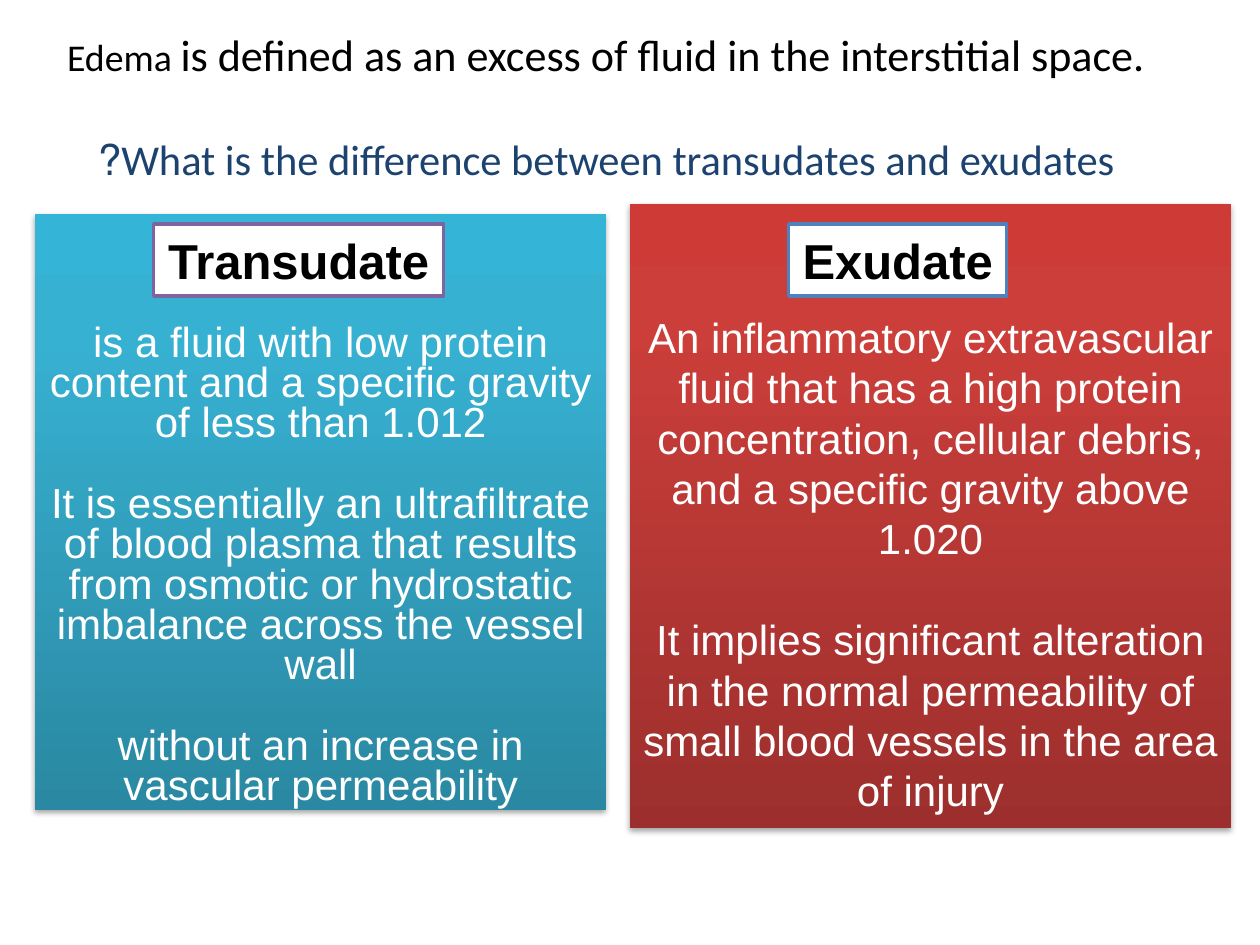
from lxml.etree import SubElement
from pptx import Presentation
from pptx.dml.color import RGBColor
from pptx.enum.shapes import MSO_SHAPE
from pptx.enum.text import MSO_ANCHOR, PP_ALIGN
from pptx.oxml.ns import qn
from pptx.util import Inches, Pt

COLORS = {
    "black": "000000", "white": "FFFFFF", "question": "1C4270",
    "purple": "8064A2", "blue": "4F81BD",
}
# Gradient stops run from the bottom of a panel to its top.
RED = [(0, "9C2F2D"), (80, "CB3E3A"), (100, "CE3B37")]
TEAL = [(0, "2A88A2"), (80, "37B1D2"), (100, "34B4D6")]

TRANSUDATE = [
    "is a fluid with low protein content and a specific gravity of less than 1.012",
    "It is essentially an ultrafiltrate of blood plasma that results from osmotic "
    "or hydrostatic imbalance across the vessel wall",
    "without an increase in vascular permeability",
]
EXUDATE = [
    "An inflammatory extravascular fluid that has a high protein concentration, "
    "cellular debris, and a specific gravity above 1.020",
    "It implies significant alteration in the normal permeability of small blood "
    "vessels in the area of injury",
]


def rgb(name):
    return RGBColor.from_string(COLORS[name])


def add_paragraph(tf, first, rtl=True):
    """Return a centred paragraph."""
    p = tf.paragraphs[0] if first else tf.add_paragraph()
    p.alignment = PP_ALIGN.CENTER
    p._p.get_or_add_pPr().set("rtl", "1" if rtl else "0")
    return p


def add_run(p, text, size, color, font="Arial", bold=False):
    r = p.add_run()
    r.text = text
    r.font.size = Pt(size)
    r.font.name = font
    r.font.bold = bold
    r.font.color.rgb = rgb(color)


def add_heading(s, left, top, width, height):
    sp = s.shapes.add_textbox(Inches(left), Inches(top), Inches(width), Inches(height))
    tf = sp.text_frame
    tf.word_wrap = True
    tf.margin_top = 0
    p = add_paragraph(tf, True, rtl=False)
    add_run(p, "Edema ", 21.6, "black", "Calibri")
    add_run(p, "is defined as an excess of fluid in the interstitial space.",
            25.2, "black", "Calibri")
    p = add_paragraph(tf, False)
    p.space_before = Pt(30)
    add_run(p, "What is the difference between transudates and exudates?",
            24.3, "question", "Calibri")


def add_rectangle(s, left, top, width, height):
    sp = s.shapes.add_shape(MSO_SHAPE.RECTANGLE, Inches(left), Inches(top),
                            Inches(width), Inches(height))
    sp.shadow.inherit = False
    return sp


def fill_gradient(sp, stops):
    sp.fill.gradient()
    sp.fill.gradient_angle = 90
    stop_list = sp._element.spPr.find(".//" + qn("a:gsLst"))
    stop_list.clear()
    for position, color in stops:
        gs = SubElement(stop_list, qn("a:gs"), pos=str(position * 1000))
        SubElement(gs, qn("a:srgbClr"), val=color)


def add_shadow(sp):
    effects = sp._element.spPr.find(qn("a:effectLst"))
    shadow = SubElement(effects, qn("a:outerShdw"), blurRad=str(Pt(3.1)),
                        dist=str(Pt(1.8)), dir="5400000", rotWithShape="0")
    color = SubElement(shadow, qn("a:srgbClr"), val=COLORS["black"])
    SubElement(color, qn("a:alpha"), val="35000")


def add_label(s, text, left, top, width, height, border):
    sp = add_rectangle(s, left, top, width, height)
    sp.fill.solid()
    sp.fill.fore_color.rgb = rgb("white")
    sp.line.color.rgb = rgb(border)
    sp.line.width = Pt(2)
    tf = sp.text_frame
    tf.word_wrap = False
    tf.vertical_anchor = MSO_ANCHOR.MIDDLE
    add_run(add_paragraph(tf, True), text, 28, "black", bold=True)


def add_panel(s, left, top, width, height, stops, texts, text_top, spacing, gap):
    sp = add_rectangle(s, left, top, width, height)
    fill_gradient(sp, stops)
    sp.line.fill.background()
    add_shadow(sp)
    tf = sp.text_frame
    tf.word_wrap = True
    tf.vertical_anchor = MSO_ANCHOR.TOP
    tf.margin_left = tf.margin_right = Inches(0.08)
    tf.margin_top = Inches(text_top)
    tf.margin_bottom = 0
    for i, text in enumerate(texts):
        p = add_paragraph(tf, i == 0)
        p.line_spacing = spacing
        if i:
            p.space_before = Pt(gap)
        add_run(p, text, 24, "white")


def main():
    prs = Presentation()
    prs.slide_width, prs.slide_height = Inches(10), Inches(7.5)
    s = prs.slides.add_slide(prs.slide_layouts[6])
    add_heading(s, 0.31, 0.22, 9, 1.3)
    add_panel(s, 5, 1.62, 4.77, 4.95, RED, EXUDATE, 0.85, 1.0, 28.8)
    add_panel(s, 0.28, 1.7, 4.53, 4.73, TEAL, TRANSUDATE, 0.88, 0.8, 23)
    add_label(s, "Transudate", 1.22, 1.78, 2.3, 0.57, "purple")
    add_label(s, "Exudate", 6.26, 1.78, 1.73, 0.57, "blue")
    prs.save("out.pptx")


if __name__ == "__main__":
    main()
